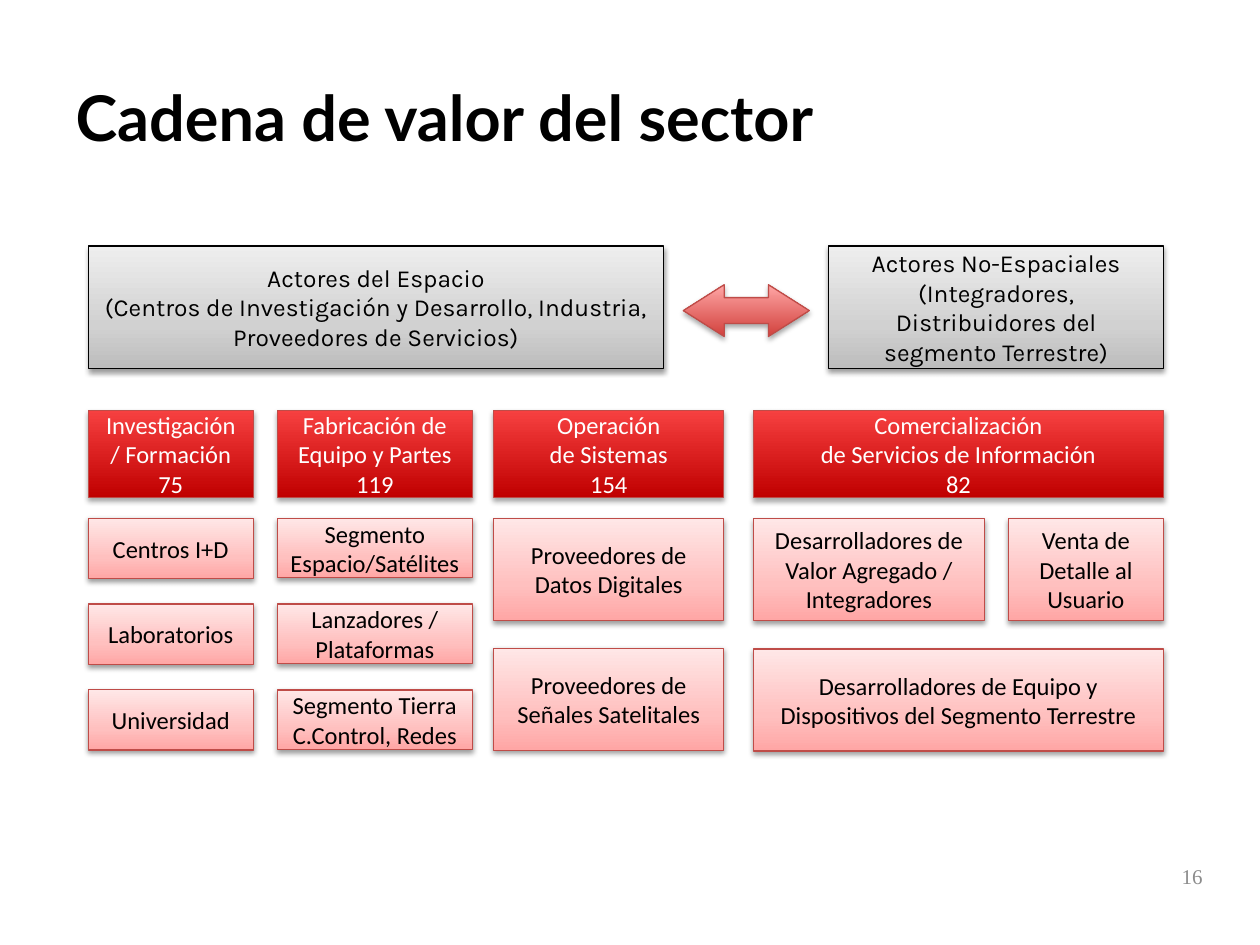
import pptx
import pptx.util
import pptx.oxml
import pptx.dml.color
import pptx.enum.shapes
import pptx.enum.text
from pptx.util import Pt

COLORS = {
    "black": "000000", "white": "FFFFFF", "red_line": "BF4C48", "number": "8C8C8C",
    "gray_dark": "BDBDBD", "gray_mid": "D1D1D1", "gray_light": "EEEEEE",
    "red_dark": "C00000", "red_light": "F64040",
    "pink_dark": "FFA6A5", "pink_mid": "FFC0BF", "pink_light": "FFE7E7",
    "arrow_dark": "D1403C",
}

# Each style: gradient stops from bottom to top, line, text colour, font, shadow
STYLES = {
    "actor": ([(0, "gray_dark"), (35, "gray_mid"), (100, "gray_light")],
              "black", "black", "Karla", (38, 1.6)),
    "stage": ([(0, "red_dark"), (100, "red_light")],
              "red_line", "white", "Calibri", (35, 1.8)),
    "member": ([(0, "pink_dark"), (35, "pink_mid"), (100, "pink_light")],
               "red_line", "black", "Calibri", (38, 1.6)),
    "arrow": ([(0, "arrow_dark"), (100, "pink_dark")],
              "red_line", "black", "Calibri", (35, 1.8)),
}

# Column: left, width, stage, row height, row step, rows of (text, width)
COLUMNS = [
    (50.4, 94.4, "Investigación / Formación\n75", 34.4, 49,
     [[("Centros I+D", 94.4)], [("Laboratorios", 94.4)], [("Universidad", 94.4)]]),
    (158.4, 111.6, "Fabricación de Equipo y Partes\n119", 34, 49,
     [[("Segmento Espacio/Satélites", 111.6)], [("Lanzadores / Plataformas", 111.6)],
      [("Segmento Tierra C.Control, Redes", 111.6)]]),
    (282.2, 131.4, "Operación\nde Sistemas\n154", 58.3, 74.2,
     [[("Proveedores de Datos Digitales", 131.4)],
      [("Proveedores de Señales Satelitales", 131.4)]]),
    (430.7, 234, "Comercialización\nde Servicios de Información\n82", 58.3, 74.6,
     [[("Desarrolladores de Valor Agregado / Integradores", 131.8),
       ("Venta de Detalle al Usuario", 88.4)],
      [("Desarrolladores de Equipo y Dispositivos del Segmento Terrestre", 234)]]),
]
ROW_GAP = 13.8


def rgb(name):
    return pptx.dml.color.RGBColor.from_string(COLORS[name])


def drawing_xml(body):
    namespace = 'xmlns:a="http://schemas.openxmlformats.org/drawingml/2006/main"'
    return pptx.oxml.parse_xml(body.replace(">", f" {namespace}>", 1))


def format_text(text_frame, size, font, color, align, bold=False):
    text_frame.word_wrap = True
    text_frame.vertical_anchor = pptx.enum.text.MSO_ANCHOR.MIDDLE
    for paragraph in text_frame.paragraphs:
        paragraph.alignment = align
        for run in paragraph.runs:
            run.font.size = Pt(size)
            run.font.name = font
            run.font.bold = bold
            run.font.color.rgb = rgb(color)


def add_block(slide, box, style, text="", kind=pptx.enum.shapes.MSO_SHAPE.RECTANGLE):
    stops, line, text_color, font, (opacity, distance) = STYLES[style]
    shape = slide.shapes.add_shape(kind, *(Pt(value) for value in box))
    shape.line.color.rgb = rgb(line)
    shape.line.width = Pt(0.75)

    # Vertical gradient; the XML allows a third stop
    shape.fill.gradient()
    shape.fill.gradient_angle = 90
    stop_list = shape._element.spPr.find(".//" + pptx.oxml.ns.qn("a:gsLst"))
    for stop in list(stop_list):
        stop_list.remove(stop)
    for position, color in stops:
        stop_list.append(drawing_xml(
            f'<a:gs pos="{position * 1000}"><a:srgbClr val="{COLORS[color]}"/></a:gs>'))

    # Soft shadow straight below
    shape.shadow.inherit = False
    effects = shape._element.spPr.find(pptx.oxml.ns.qn("a:effectLst"))
    effects.append(drawing_xml(
        f'<a:outerShdw blurRad="{Pt(3.1)}" dist="{Pt(distance)}" dir="5400000" '
        f'rotWithShape="0"><a:srgbClr val="{COLORS["black"]}">'
        f'<a:alpha val="{opacity * 1000}"/></a:srgbClr></a:outerShdw>'))

    if text:
        shape.text_frame.text = text
        format_text(shape.text_frame, 14, font, text_color,
                    pptx.enum.text.PP_ALIGN.CENTER)
    return shape


def add_title(slide, left, top, width, height):
    title = slide.shapes.title
    title.left, title.top = Pt(left), Pt(top)
    title.width, title.height = Pt(width), Pt(height)
    title.text_frame.text = "Cadena de valor del sector"
    format_text(title.text_frame, 36, "Lato", "black",
                pptx.enum.text.PP_ALIGN.LEFT, bold=True)


def add_actors(slide, left, top, width, height):
    space_width, other_width = 329, 191.4
    add_block(slide, (left, top, space_width, height), "actor",
              "Actores del Espacio\n(Centros de Investigación y Desarrollo, "
              "Industria, Proveedores de Servicios)")
    add_block(slide, (left + width - other_width, top, other_width, height), "actor",
              "Actores No-Espaciales (Integradores, Distribuidores del "
              "segmento Terrestre)")
    # Two-way arrow in the gap between the actors
    arrow_width, arrow_height = 72, 29.6
    gap_center = left + (space_width + width - other_width) / 2
    arrow = add_block(slide, (gap_center - arrow_width / 2,
                              top + (height - arrow_height) / 2 + 2,
                              arrow_width, arrow_height),
                      "arrow", kind=pptx.enum.shapes.MSO_SHAPE.LEFT_RIGHT_ARROW)
    arrow.adjustments[0] = 0.5
    arrow.adjustments[1] = 0.79


def add_column(slide, top, column):
    left, width, stage, row_height, row_step, rows = column
    add_block(slide, (left, top, width, 49.6), "stage", stage)
    for index, row in enumerate(rows):
        row_left = left
        for text, block_width in row:
            add_block(slide, (row_left, top + 61.5 + index * row_step,
                              block_width, row_height), "member", text)
            row_left += block_width + ROW_GAP


def add_slide_number(slide, left, top, width, height):
    box = slide.shapes.add_textbox(Pt(left), Pt(top), Pt(width), Pt(height))
    box.text_frame.text = "16"
    format_text(box.text_frame, 12, "Times New Roman", "number",
                pptx.enum.text.PP_ALIGN.RIGHT)


def main():
    presentation = pptx.Presentation()
    presentation.slide_width, presentation.slide_height = Pt(720), Pt(540)
    slide = presentation.slides.add_slide(presentation.slide_layouts[5])
    add_title(slide, 36, 21.6, 648, 90)
    add_actors(slide, 50.4, 140.5, 614.6, 70)
    for column in COLUMNS:
        add_column(slide, 234.7, column)
    add_slide_number(slide, 526.3, 486, 168, 28.8)
    presentation.save("out.pptx")


if __name__ == "__main__":
    main()
